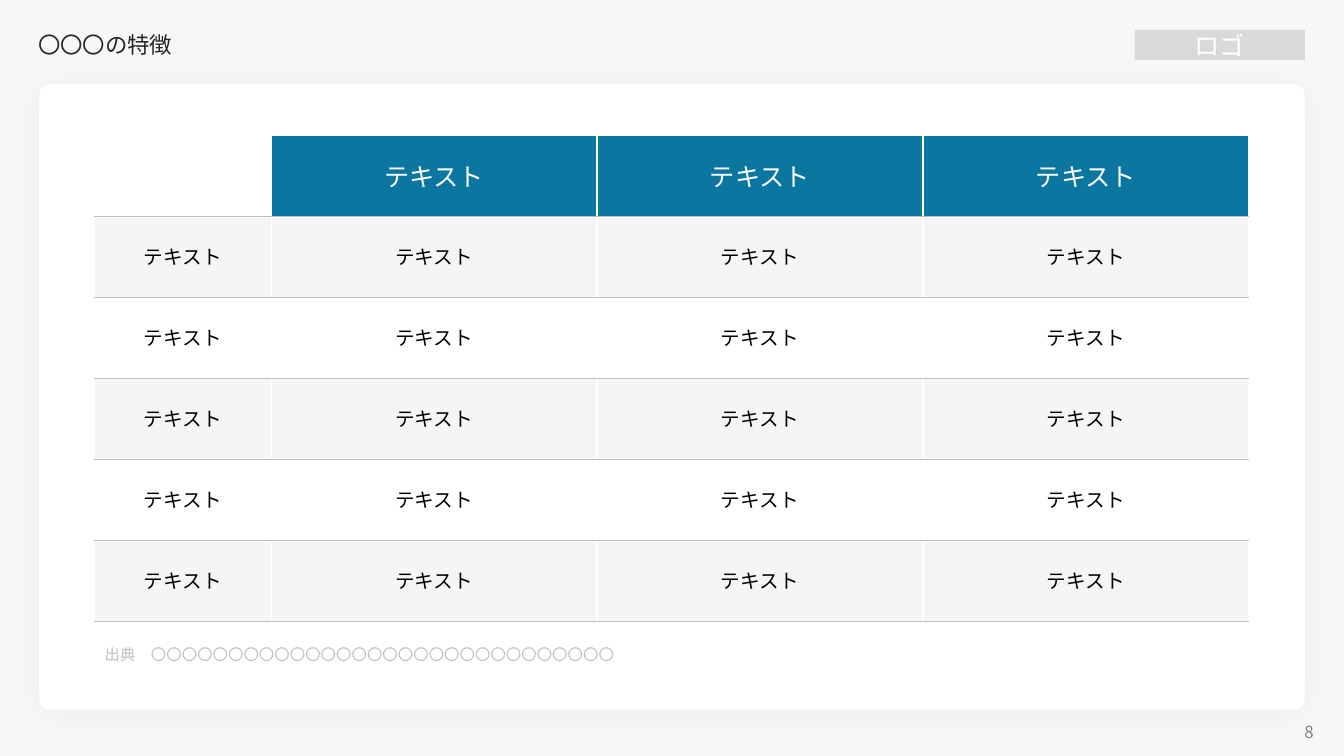
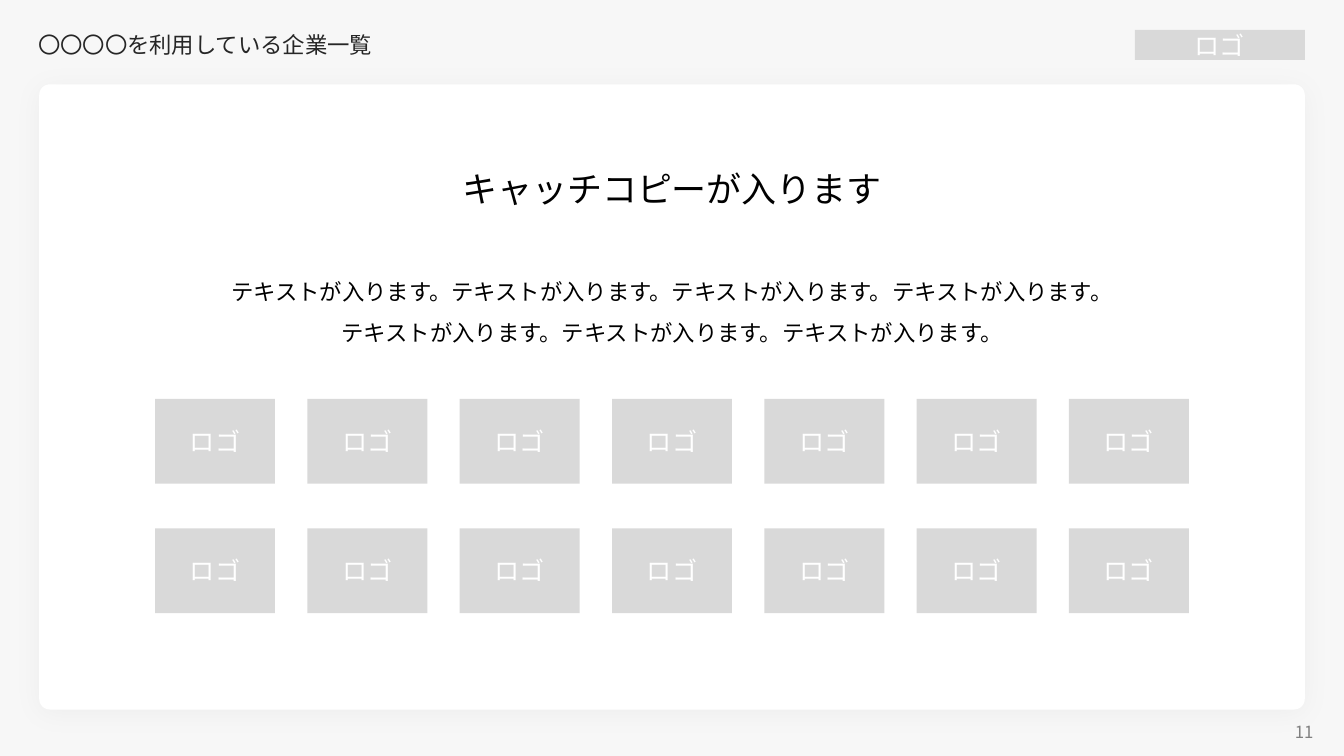
"""Builds a two-slide deck: a feature table and a wall of client logos."""
from dataclasses import dataclass

from lxml.etree import SubElement
from pptx import Presentation
from pptx.dml.color import RGBColor
from pptx.enum.shapes import MSO_SHAPE as SHAPE
from pptx.enum.text import MSO_ANCHOR as ANCHOR, MSO_AUTO_SIZE as AUTO, PP_ALIGN as ALIGN
from pptx.oxml import parse_xml
from pptx.oxml.ns import nsdecls, qn
from pptx.util import Pt


@dataclass(frozen=True)
class Theme:
    font: str = "Noto Sans CJK JP"
    white: str = "FFFFFF"
    black: str = "000000"
    backdrop: str = "F7F7F7"
    band: str = "F5F5F5"
    placeholder: str = "D9D9D9"
    rule: str = "BFBFBF"
    muted: str = "808080"
    ink: str = "262626"
    accent: str = "0B76A0"
    catch_size: float = 25
    large: float = 18
    body: float = 16
    cell: float = 14
    page: float = 12
    source: float = 11


class Deck:
    WIDTH, HEIGHT = 960, 540

    def __init__(self, theme):
        self.theme = theme
        self.prs = Presentation()
        self.prs.slide_width, self.prs.slide_height = Pt(self.WIDTH), Pt(self.HEIGHT)
        self.s = None

    def fill(self, target, color):
        target.fill.solid()
        target.fill.fore_color.rgb = RGBColor.from_string(color)

    def style(self, tf, size, color, align=ALIGN.LEFT, spacing=None, gap=None):
        for p in tf.paragraphs:
            p.alignment = align
            if spacing:
                p.line_spacing = spacing
            if gap is not None:
                p.space_before = p.space_after = Pt(gap)
            for r in p.runs:
                r.font.size = Pt(size)
                r.font.color.rgb = RGBColor.from_string(color)
                r.font.name = self.theme.font
                SubElement(r.font._element, qn("a:ea"), typeface=self.theme.font)

    def slide(self, title, number):
        t = self.theme
        self.s = self.prs.slides.add_slide(self.prs.slide_layouts[5])
        self.fill(self.s.background, t.backdrop)
        self.panel(28, 60.2, 904, 446.6)
        self.text(str(number), 721.4, 514, 224, 17.3, t.page, t.muted,
                  ALIGN.RIGHT, anchor=ANCHOR.MIDDLE)
        self.logo(810.7, 21.4, 121.3, 21.4)
        sp = self.s.shapes.title
        sp.left, sp.top, sp.width, sp.height = Pt(20), Pt(18), Pt(720), Pt(29.5)
        tf = sp.text_frame
        tf.text = title
        tf.auto_size = AUTO.NONE
        tf.vertical_anchor = ANCHOR.MIDDLE
        self.style(tf, t.body, t.ink, spacing=0.9)

    def box(self, kind, x, y, w, h, color):
        sp = self.s.shapes.add_shape(kind, Pt(x), Pt(y), Pt(w), Pt(h))
        sp.shadow.inherit = False
        sp.line.fill.background()
        self.fill(sp, color)
        return sp

    def panel(self, x, y, w, h):
        sp = self.box(SHAPE.ROUNDED_RECTANGLE, x, y, w, h, self.theme.white)
        sp.adjustments[0] = 0.017
        effects = sp._element.spPr.find(qn("a:effectLst"))
        effects.append(parse_xml(
            f'<a:outerShdw {nsdecls("a")} blurRad="{Pt(20)}" dist="{Pt(3)}" dir="5400000" '
            f'algn="t" rotWithShape="0"><a:srgbClr val="{self.theme.black}">'
            '<a:alpha val="3000"/></a:srgbClr></a:outerShdw>'))

    def logo(self, x, y, w, h):
        tf = self.box(SHAPE.RECTANGLE, x, y, w, h, self.theme.placeholder).text_frame
        tf.text = "ロゴ"
        tf.vertical_anchor = ANCHOR.MIDDLE
        self.style(tf, self.theme.large, self.theme.white, ALIGN.CENTER)

    def logo_grid(self, rows, cols, top, w, h, x_step, y_step):
        left = (self.WIDTH - (cols - 1) * x_step - w) / 2
        for i in range(rows * cols):
            row, col = divmod(i, cols)
            self.logo(left + col * x_step, top + row * y_step, w, h)

    def text(self, text, x, y, w, h, size, color, align=ALIGN.LEFT, wrap=True,
             anchor=ANCHOR.TOP, spacing=None, gap=None):
        tf = self.s.shapes.add_textbox(Pt(x), Pt(y), Pt(w), Pt(h)).text_frame
        tf.text = text
        tf.word_wrap = wrap
        tf.vertical_anchor = anchor
        self.style(tf, size, color, align, spacing, gap)

    def borders(self, cell, top):
        t = self.theme
        sides = {"L": (t.white, 1), "R": (t.white, 1), "T": top, "B": (t.rule, 0.25)}
        for i, (side, (color, width)) in enumerate(sides.items()):
            cell._tc.get_or_add_tcPr().insert(i, parse_xml(
                f'<a:ln{side} {nsdecls("a")} w="{Pt(width)}"><a:solidFill>'
                f'<a:srgbClr val="{color}"/></a:solidFill></a:ln{side}>'))

    def table(self, rows, x, y, widths, row_height):
        t = self.theme
        table = self.s.shapes.add_table(len(rows), len(widths), Pt(x), Pt(y), Pt(sum(widths)),
                                        Pt(row_height * len(rows))).table
        table.first_row = table.horz_banding = False
        for column, width in zip(table.columns, widths):
            column.width = Pt(width)
        for i, values in enumerate(rows):
            table.rows[i].height = Pt(row_height)
            for j, value in enumerate(values):
                cell = table.cell(i, j)
                header = i == 0
                if header:
                    color = t.accent if j else t.white
                else:
                    color = t.band if i % 2 else t.white
                self.fill(cell, color)
                self.borders(cell, (t.white, 1) if header else (t.rule, 0.25))
                cell.text_frame.text = value
                cell.vertical_anchor = ANCHOR.MIDDLE
                self.style(cell.text_frame, t.large if header else t.cell,
                           t.white if header else t.black, ALIGN.CENTER)


def main():
    t = Theme()
    deck = Deck(t)

    deck.slide("〇〇〇の特徴", 8)
    deck.text("出典　" + "〇" * 30, 67.7, 457.2, 824.4, 20.9, t.source, t.rule, gap=4)
    deck.table([[""] + ["テキスト"] * 3] + [["テキスト"] * 4] * 5,
               67.7, 96.4, [126] + [232.8] * 3, 57.85)

    deck.slide("〇〇〇〇を利用している企業一覧", 11)
    sentence = "テキストが入ります。"
    deck.text(sentence * 4 + "\n" + sentence * 3, 149.8, 185.8, 661, 62, t.body, t.black,
              ALIGN.CENTER, wrap=False, spacing=1.5)
    deck.text("キャッチコピーが入ります", 321, 116, 318, 37.4, t.catch_size, t.black,
              ALIGN.CENTER, wrap=False)
    deck.logo_grid(2, 7, 285, 85.7, 60.4, 108.8, 92.5)

    deck.prs.save("out.pptx")


if __name__ == "__main__":
    main()
